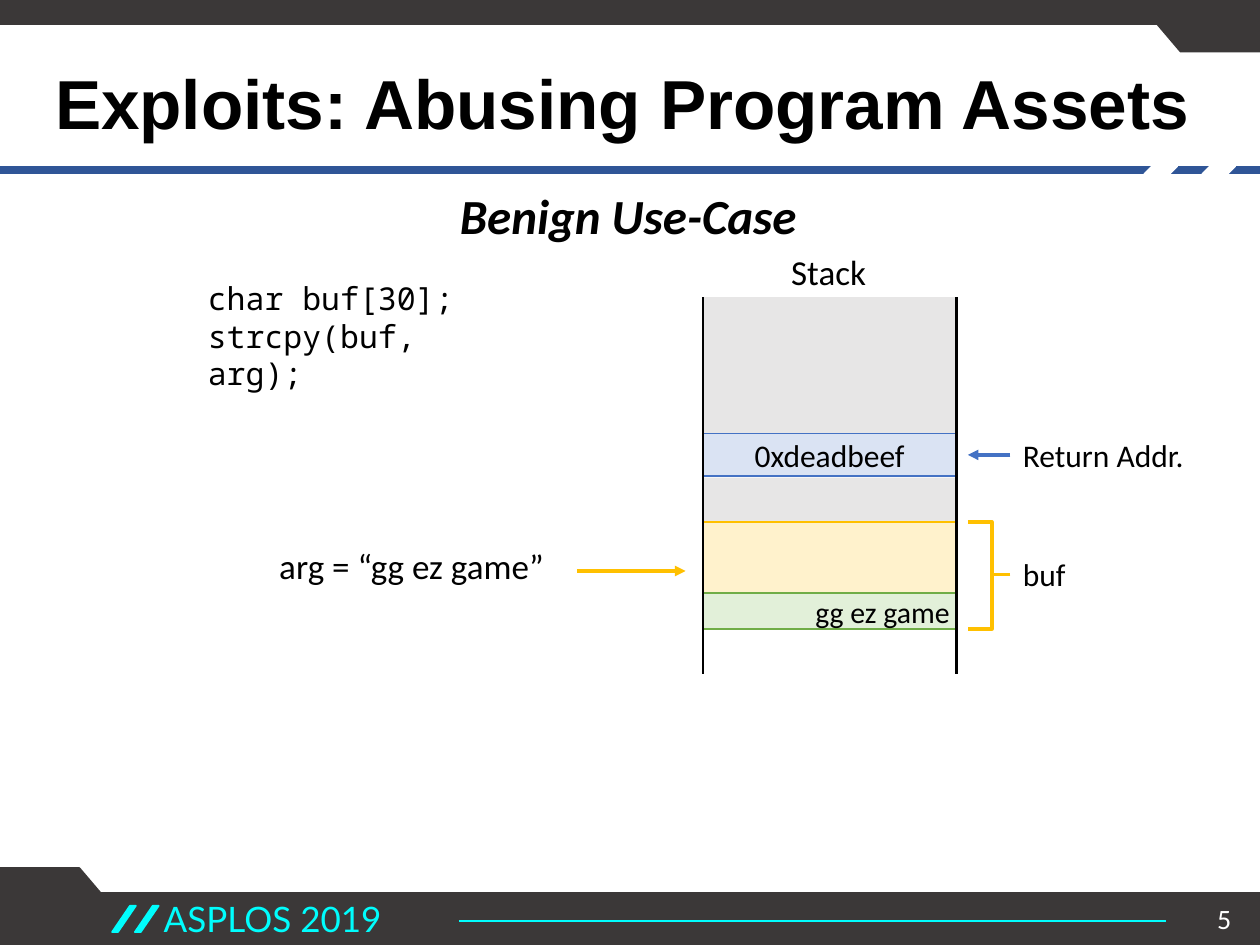
from dataclasses import dataclass

from lxml import etree
from pptx import Presentation
from pptx.dml.color import RGBColor
from pptx.enum.shapes import MSO_CONNECTOR, MSO_SHAPE
from pptx.enum.text import MSO_ANCHOR, PP_ALIGN
from pptx.oxml.ns import qn
from pptx.util import Cm, Pt

RECT = MSO_SHAPE.RECTANGLE
SLANT = MSO_SHAPE.PARALLELOGRAM
BRACKET = MSO_SHAPE.RIGHT_BRACKET
STRAIGHT = MSO_CONNECTOR.STRAIGHT
TOP, MIDDLE, BOTTOM = MSO_ANCHOR.TOP, MSO_ANCHOR.MIDDLE, MSO_ANCHOR.BOTTOM
LEFT, CENTER, RIGHT = PP_ALIGN.LEFT, PP_ALIGN.CENTER, PP_ALIGN.RIGHT

WIDTH, HEIGHT = 25.4, 19.05
DARK, CYAN, NAVY, WHITE, BLACK = "3B3838", "00FDFD", "2F5597", "FFFFFF", "000000"
GREY, BLUE, GOLD, GREEN = "E7E6E6", "4472C4", "FFC000", "70AD47"
STACK_X, STACK_W, STACK_TOP, STACK_END = 14.17, 5.11, 5.99, 13.59
LABEL_X, LABEL_W, LABEL_H = 20.37, 3.86, 0.86
MARK_X = 19.51


@dataclass
class Band:
    """One region of the stack."""
    y: float
    h: float
    fill: str
    line: str | None = None
    text: str = ""
    size: float = 18
    align: PP_ALIGN = CENTER
    anchor: MSO_ANCHOR = MIDDLE
    insets: tuple = (0.25, 0.13, 0.25, 0.13)


@dataclass
class Label:
    """A caption tied by a line to a part of the stack."""
    text: str
    y: float
    line_end: float
    color: str
    arrow: bool


BANDS = [
    Band(STACK_TOP, 2.74, GREY),
    Band(9.63, 0.89, GREY),
    Band(8.74, 0.86, "DAE3F3", BLUE, "0xdeadbeef"),
    Band(10.52, 2.16, "FFF2CC", GOLD),
    Band(11.96, 0.72, "E2F0D9", GREEN, "gg ez game", 17, RIGHT, BOTTOM, (0, 0, 0.13, 0)),
]
LABELS = [
    Label("Return Addr.", 8.74, MARK_X, BLUE, True),
    Label("buf", 11.15, 19.99, GOLD, False),
]


def rgb(value: str) -> RGBColor:
    """Turn a hex string into a colour."""
    return RGBColor.from_string(value)


def paint(sp, fill: str | None, line: str | None, width: float = 1) -> None:
    """Set the fill and outline of a shape."""
    sp.shadow.inherit = False
    if fill:
        sp.fill.solid()
        sp.fill.fore_color.rgb = rgb(fill)
    else:
        sp.fill.background()
    if line:
        sp.line.color.rgb = rgb(line)
        sp.line.width = Pt(width)
    else:
        sp.line.fill.background()


def add_shape(s, kind, x: float, y: float, w: float, h: float, fill: str | None,
              line: str | None = None, width: float = 1):
    """Draw a preset shape."""
    sp = s.shapes.add_shape(kind, Cm(x), Cm(y), Cm(w), Cm(h))
    paint(sp, fill, line, width)
    return sp


def add_outline(s, points: list[tuple[float, float]], color: str) -> None:
    """Draw a closed polygon."""
    corners = [(Cm(x), Cm(y)) for x, y in points]
    builder = s.shapes.build_freeform(*corners[0])
    builder.add_line_segments(corners[1:], close=True)
    paint(builder.convert_to_shape(), color, color)


def add_line(s, x1: float, y1: float, x2: float, y2: float, color: str,
             width: float, arrow: bool = False):
    """Draw a straight line, with an arrowhead at its end if asked."""
    cx = s.shapes.add_connector(STRAIGHT, Cm(x1), Cm(y1), Cm(x2), Cm(y2))
    cx.line.color.rgb = rgb(color)
    cx.line.width = Pt(width)
    if arrow:
        etree.SubElement(cx.line._get_or_add_ln(), qn("a:tailEnd"), type="triangle")
    etree.SubElement(cx._element.spPr, qn("a:effectLst"))
    return cx


def set_text(sp, text: str, size: float = 18, font: str = "Calibri", color: str = BLACK,
             bold: bool = False, italic: bool = False, align: PP_ALIGN = LEFT,
             anchor: MSO_ANCHOR = TOP, wrap: bool = True, spacing: float = 1,
             insets: tuple = (0.25, 0.13, 0.25, 0.13)) -> None:
    """Fill a shape with text, one paragraph per line."""
    tf = sp.text_frame
    tf.word_wrap = wrap
    tf.vertical_anchor = anchor
    tf.margin_left, tf.margin_top, tf.margin_right, tf.margin_bottom = map(Cm, insets)
    for i, line in enumerate(text.split("\n")):
        p = tf.add_paragraph() if i else tf.paragraphs[0]
        p.alignment = align
        p.line_spacing = spacing
        r = p.add_run()
        r.text = line
        r.font.size, r.font.name = Pt(size), font
        r.font.bold, r.font.italic = bold, italic
        r.font.color.rgb = rgb(color)


def add_text(s, x: float, y: float, w: float, h: float, text: str, **style):
    """Add a text box."""
    sp = s.shapes.add_textbox(Cm(x), Cm(y), Cm(w), Cm(h))
    set_text(sp, text, **style)
    return sp


def draw_frame(s) -> None:
    """Draw the bars, tabs, title rule and footer."""
    tab = [(0, 18.57), (0, 17.5), (1.6, 17.5), (2.51, 18.57)]
    add_outline(s, tab, DARK)
    add_shape(s, RECT, 0, 18.01, WIDTH, 1.04, DARK, DARK)
    add_line(s, 9.25, 18.56, 23.5, 18.56, CYAN, 1)
    add_outline(s, [(WIDTH - x, 18.54 - y) for x, y in tab], DARK)
    add_shape(s, RECT, 0, -0.03, WIDTH, 0.51, DARK, DARK)
    for x in (2.26, 2.72):
        add_shape(s, SLANT, x, 18.26, 0.48, 0.53, CYAN, CYAN).adjustments[0] = 0.753
    add_text(s, 3.05, 17.96, 6.3, 1.12, "ASPLOS 2019", size=20, font="Lato", color=CYAN)
    add_line(s, 0, 3.43, WIDTH, 3.43, NAVY, 4.5)
    for x in (24.28, 23.11):
        add_shape(s, RECT, x, 3.25, 0.58, 0.36, WHITE, WHITE).rotation = 315
    add_text(s, 23.65, 18.01, 1.42, 1.02, "5", size=16, color=WHITE, align=RIGHT, anchor=MIDDLE)


def draw_band(s, band: Band) -> None:
    """Draw one region of the stack."""
    sp = add_shape(s, RECT, STACK_X, band.y, STACK_W, band.h, band.fill, band.line)
    if band.text:
        set_text(sp, band.text, size=band.size, align=band.align,
                 anchor=band.anchor, insets=band.insets)


def draw_label(s, label: Label) -> None:
    """Draw a caption and the line that leaves its left side."""
    box = add_text(s, LABEL_X, label.y, LABEL_W, LABEL_H, label.text, anchor=MIDDLE)
    y = label.y + LABEL_H / 2
    cx = add_line(s, LABEL_X, y, label.line_end, y, label.color, 2, label.arrow)
    cx.begin_connect(box, 1)


def main() -> None:
    """Build the slide and save it."""
    prs = Presentation()
    prs.slide_width, prs.slide_height = Cm(WIDTH), Cm(HEIGHT)
    s = prs.slides.add_slide(prs.slide_layouts[6])
    draw_frame(s)
    add_text(s, 0.86, 1.02, 23.7, 2.29, "Exploits: Abusing Program Assets", size=39.6,
             font="Arial", bold=True, anchor=MIDDLE, spacing=0.9)
    for band in BANDS:
        draw_band(s, band)
    add_text(s, 9.02, 3.61, 7.37, 1.45, "Benign Use-Case", size=28, bold=True,
             italic=True, wrap=False)
    add_text(s, 3.94, 5.49, 6.5, 1.8, "char buf[30];\nstrcpy(buf, arg);", font="Noto Sans Mono")
    add_text(s, 5.38, 10.85, 5.89, 1.12, "arg = “gg ez game”", size=20, wrap=False)
    for x in (STACK_X, STACK_X + STACK_W):
        add_line(s, x, STACK_TOP, x, STACK_END, BLACK, 1.5)
    add_line(s, 11.63, 11.51, 13.82, 11.51, GOLD, 2, arrow=True)
    add_text(s, 15.7, 4.93, 2.06, 1.12, "Stack", size=20, wrap=False)
    for label in LABELS:
        draw_label(s, label)
    add_shape(s, BRACKET, MARK_X, 10.52, 0.48, 2.16, None, GOLD, 2.25).adjustments[0] = 0
    prs.save("out.pptx")


if __name__ == "__main__":
    main()
